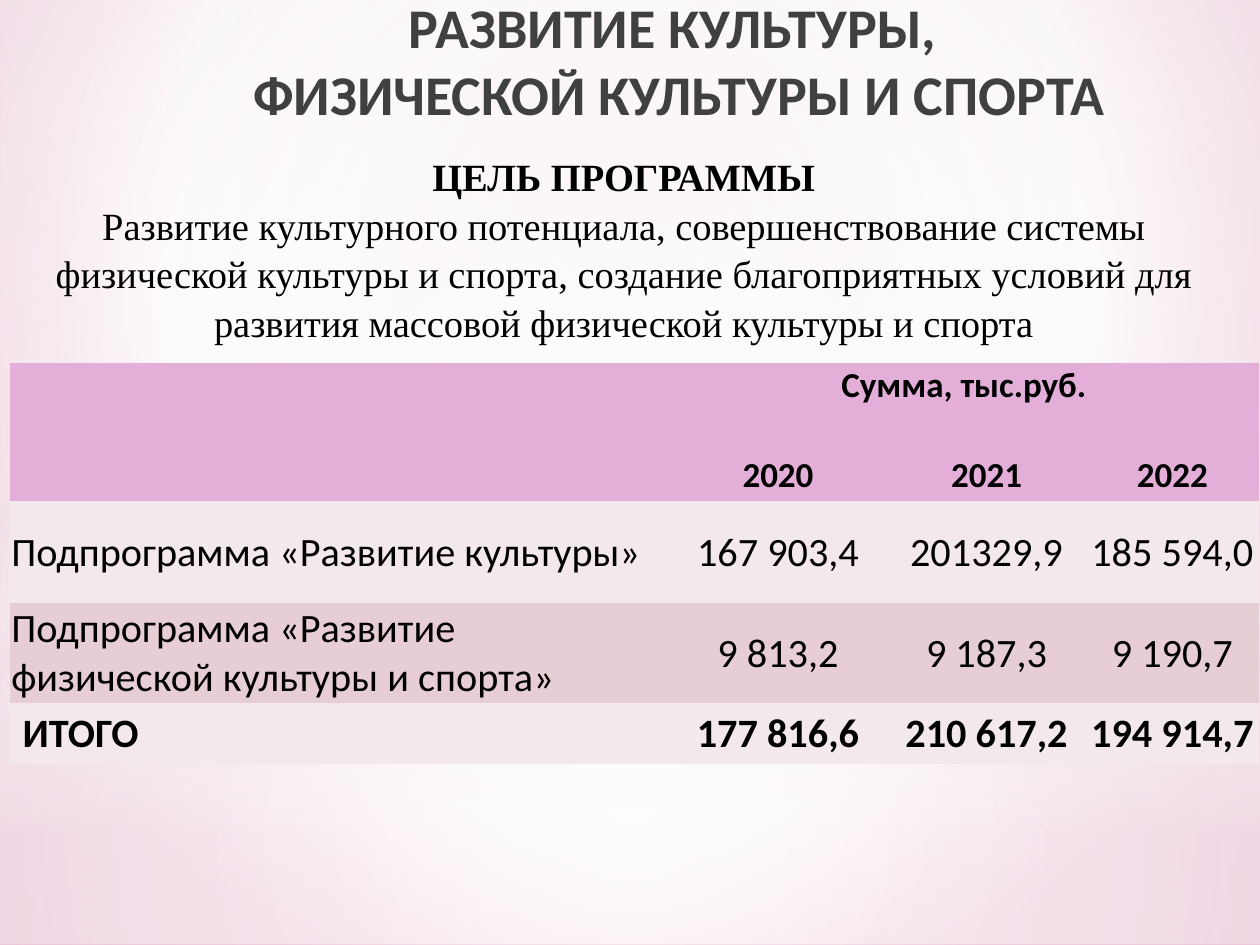
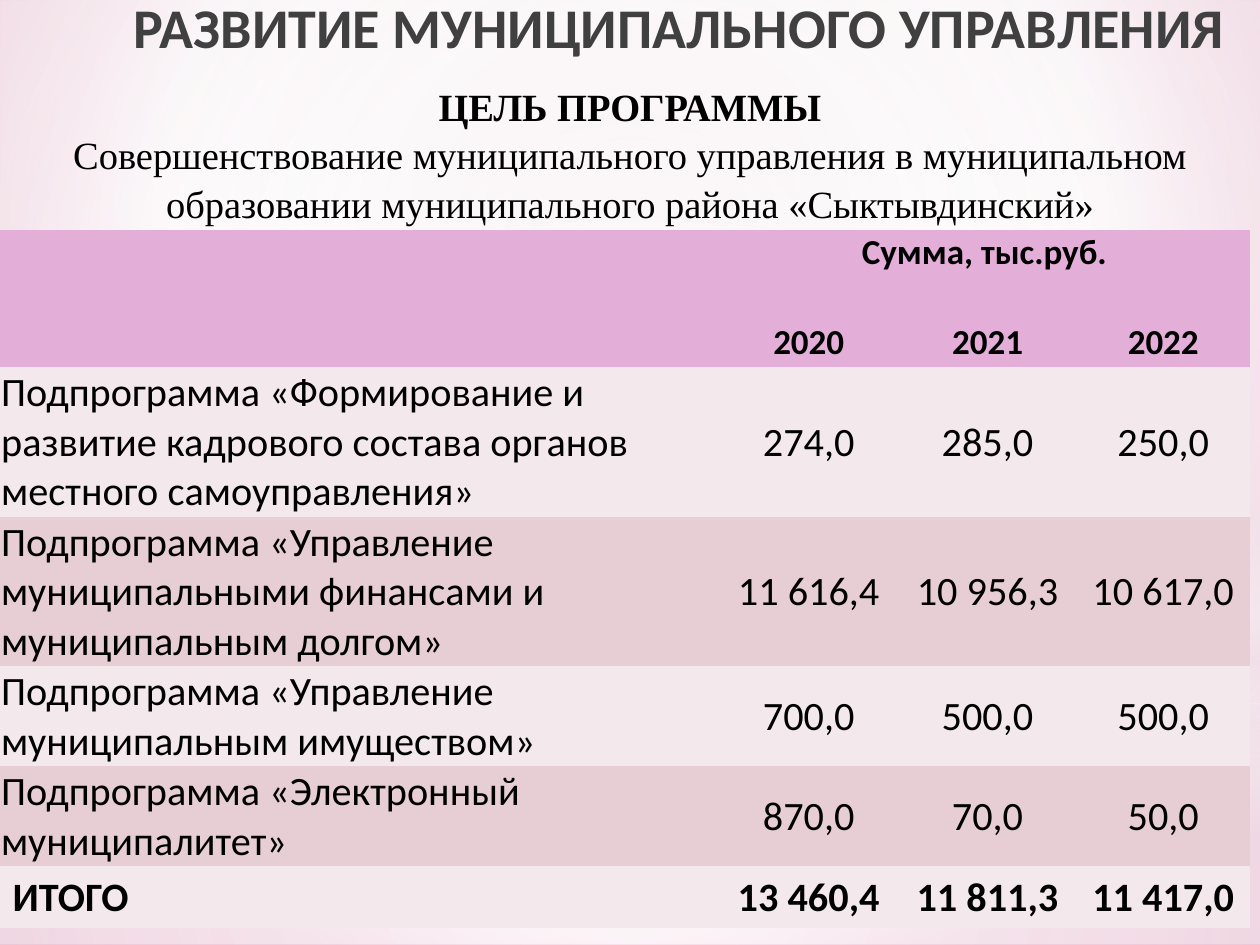
from dataclasses import dataclass
from typing import Optional

from lxml import etree
from pptx import Presentation
from pptx.dml.color import RGBColor
from pptx.enum.shapes import MSO_SHAPE as Shape
from pptx.enum.text import MSO_ANCHOR as Anchor, MSO_AUTO_SIZE as AutoSize, PP_ALIGN as Align
from pptx.oxml.ns import qn
from pptx.util import Pt

BLACK = RGBColor(0x00, 0x00, 0x00)
WHITE = RGBColor(0xFF, 0xFF, 0xFF)
TITLE_GREY = RGBColor(0x40, 0x40, 0x40)
HEADER_PINK = RGBColor(0xE3, 0xAF, 0xD8)
BAND_LIGHT = RGBColor(0xF3, 0xE8, 0xEB)
BAND_DARK = RGBColor(0xE6, 0xCE, 0xD4)
BLUSH = RGBColor(0xF4, 0xE7, 0xED)
BACK_CENTRE = RGBColor(0xED, 0xDA, 0xE2)
BACK_EDGE = RGBColor(0xE0, 0x9D, 0xBC)

SANS = "Calibri"
SERIF = "Times New Roman"
NO_GRID_STYLE = "{2D5ABB26-0587-4C30-8999-92F81FD0307C}"
YEARS = ("2020", "2021", "2022")
HEADER_HEIGHTS = (49.2, 29.5)
TOTAL_HEIGHT = 35.3
CELL_INSET = 0.72


@dataclass(frozen=True)
class Stop:
    position: int
    color: RGBColor
    alpha: int = 100


@dataclass(frozen=True)
class Gradient:
    stops: tuple[Stop, ...]
    focus: Optional[tuple[int, int, int, int]] = (50, 50, 50, 50)


@dataclass(frozen=True)
class Glow:
    kind: Shape
    top: float
    height: float
    gradient: Gradient


@dataclass(frozen=True)
class Row:
    label: str
    amounts: tuple[str, str, str]
    height: float = TOTAL_HEIGHT


@dataclass(frozen=True)
class Program:
    title: str
    goal: str
    goal_box: tuple[float, float, float, float]
    table_left: float
    table_top: float
    columns: tuple[float, float, float, float]
    subprograms: tuple[Row, ...]
    total: Row


BACKGROUND = Gradient(
    (Stop(0, BACK_CENTRE), Stop(60, WHITE), Stop(100, BACK_EDGE)), (20, 10, 20, 60))

GLOWS = (
    Glow(Shape.RECTANGLE, 402, 138, Gradient(
        (Stop(0, WHITE, 91), Stop(37, WHITE, 76), Stop(100, BLUSH, 79)))),
    Glow(Shape.RECTANGLE, 0, 402, Gradient(
        (Stop(0, WHITE, 89), Stop(48, WHITE, 62), Stop(100, BLUSH, 79)))),
    Glow(Shape.RECTANGLE, 297, 180, Gradient(
        (Stop(0, WHITE, 0), Stop(29, WHITE, 30), Stop(45, BLUSH, 40),
         Stop(55, WHITE, 26), Stop(65, BLUSH, 60), Stop(100, WHITE, 0)), None)),
    Glow(Shape.OVAL, 126, 402, Gradient((Stop(0, WHITE), Stop(56, WHITE, 0)))),
)

PROGRAMS = (
    Program(
        "РАЗВИТИЕ КУЛЬТУРЫ, \vФИЗИЧЕСКОЙ КУЛЬТУРЫ И СПОРТА",
        "Развитие культурного потенциала, совершенствование системы физической культуры "
        "и спорта, создание благоприятных условий для развития массовой физической "
        "культуры и спорта",
        (-3.6, 82.8, 720, 113.8), 5.76, 207.4, (376.6, 124.6, 113.8, 98.6),
        (Row("Подпрограмма «Развитие культуры»", ("167 903,4", "201329,9", "185 594,0"), 58.3),
         Row("Подпрограмма «Развитие физической культуры и спорта»",
             ("9 813,2", "9 187,3", "9 190,7"), 57)),
        Row("ИТОГО", ("177 816,6", "210 617,2", "194 914,7")),
    ),
    Program(
        "РАЗВИТИЕ МУНИЦИПАЛЬНОГО УПРАВЛЕНИЯ",
        "Совершенствование муниципального управления в муниципальном образовании "
        "муниципального района «Сыктывдинский»",
        (0, 42.5, 720, 87.1), 0, 131.2, (411.1, 102.2, 102.2, 98.6),
        (Row("Подпрограмма «Формирование и развитие кадрового состава органов местного "
             "самоуправления»", ("274,0", "285,0", "250,0"), 85.3),
         Row("Подпрограмма «Управление муниципальными финансами и муниципальным долгом»",
             ("11 616,4", "10 956,3", "10 617,0"), 85.3),
         Row("Подпрограмма «Управление муниципальным имуществом»",
             ("700,0", "500,0", "500,0"), 57),
         Row("Подпрограмма «Электронный муниципалитет»", ("870,0", "70,0", "50,0"), 57)),
        Row("ИТОГО", ("13 460,4", "11 811,3", "11 417,0")),
    ),
)


def gradient_xml(gradient: Gradient):
    fill = etree.Element(qn("a:gradFill"), rotWithShape="1")
    stops = etree.SubElement(fill, qn("a:gsLst"))
    for stop in gradient.stops:
        gs = etree.SubElement(stops, qn("a:gs"), pos=str(stop.position * 1000))
        color = etree.SubElement(gs, qn("a:srgbClr"), val=str(stop.color))
        if stop.alpha < 100:
            etree.SubElement(color, qn("a:alpha"), val=str(stop.alpha * 1000))
    if gradient.focus is None:
        etree.SubElement(fill, qn("a:lin"), ang="5400000", scaled="0")
    else:
        circle = etree.SubElement(fill, qn("a:path"), path="circle")
        sides = {side: str(v * 1000) for side, v in zip("ltrb", gradient.focus)}
        etree.SubElement(circle, qn("a:fillToRect"), **sides)
    return fill


def dress_master(prs, slide) -> None:
    master = prs.slide_master
    master.background.fill.solid()
    bg = master.element.xpath("./p:cSld/p:bg/p:bgPr")[0]
    bg.replace(bg[0], gradient_xml(BACKGROUND))
    for i, glow in enumerate(GLOWS):
        sp = slide.shapes.add_shape(glow.kind, 0, Pt(glow.top), prs.slide_width, Pt(glow.height))
        sp.shadow.inherit = False
        sp.line.fill.background()
        sp.element.spPr.insert(2, gradient_xml(glow.gradient))
        sp.element.xpath("./p:nvSpPr/p:cNvPr")[0].set("id", str(100 + i))
        master.shapes.element.insert(2 + i, sp.element)


def style(p, size: float, bold: bool, font: str = SANS,
          color: RGBColor = BLACK, align: Align = Align.CENTER) -> None:
    p.alignment = align
    p.font.name = font
    p.font.size = Pt(size)
    p.font.bold = bold
    p.font.color.rgb = color


def set_title(slide, text: str) -> None:
    sp = slide.shapes.title
    sp.left, sp.top, sp.width, sp.height = Pt(48.2), Pt(-7.9), Pt(679.7), Pt(71.3)
    tf = sp.text_frame
    tf.text = text
    tf.word_wrap = True
    tf.auto_size = AutoSize.NONE
    tf.vertical_anchor = Anchor.TOP
    style(tf.paragraphs[0], 32, True, color=TITLE_GREY)


def add_goal(slide, program: Program) -> None:
    tf = slide.shapes.add_textbox(*map(Pt, program.goal_box)).text_frame
    tf.word_wrap = True
    tf.text = "ЦЕЛЬ ПРОГРАММЫ\n" + program.goal
    for p, bold in zip(tf.paragraphs, (True, False)):
        style(p, 22, bold, SERIF)
        p.line_spacing = 1.05


def set_cell(cell, text: str, size: float, bold: bool, align: Align = Align.CENTER,
             anchor: Anchor = Anchor.MIDDLE) -> None:
    cell.text = text
    cell.vertical_anchor = anchor
    cell.margin_left = cell.margin_right = cell.margin_top = Pt(CELL_INSET)
    cell.margin_bottom = 0
    style(cell.text_frame.paragraphs[0], size, bold, align=align)


def add_budget(slide, program: Program) -> None:
    rows = (*program.subprograms, program.total)
    heights = (*HEADER_HEIGHTS, *(row.height for row in rows))
    frame = slide.shapes.add_table(
        len(heights), len(program.columns), Pt(program.table_left), Pt(program.table_top),
        Pt(sum(program.columns)), Pt(sum(heights)))
    table = frame.table
    frame.element.xpath(".//a:tableStyleId")[0].text = NO_GRID_STYLE
    for column, width in zip(table.columns, program.columns):
        column.width = Pt(width)
    for r, height in enumerate(heights):
        table.rows[r].height = Pt(height)
        color = HEADER_PINK if r < 2 else (BAND_LIGHT, BAND_DARK)[r % 2]
        for cell in table.rows[r].cells:
            cell.fill.solid()
            cell.fill.fore_color.rgb = color

    table.cell(0, 0).merge(table.cell(1, 0))
    table.cell(0, 1).merge(table.cell(0, 3))
    set_cell(table.cell(0, 1), "Сумма, тыс.руб.", 20, True, anchor=Anchor.TOP)
    for c, year in enumerate(YEARS, 1):
        set_cell(table.cell(1, c), year, 20, True)
    for r, row in enumerate(rows, 2):
        bold = row is program.total
        set_cell(table.cell(r, 0), row.label, 23, bold, Align.LEFT)
        for c, amount in enumerate(row.amounts, 1):
            set_cell(table.cell(r, c), amount, 23, bold)
    table.cell(len(heights) - 1, 0).margin_left = Pt(7.2)


def main() -> None:
    prs = Presentation()
    prs.slide_width, prs.slide_height = Pt(720), Pt(540)
    for i, program in enumerate(PROGRAMS):
        slide = prs.slides.add_slide(prs.slide_layouts[5])
        if i == 0:
            dress_master(prs, slide)
        set_title(slide, program.title)
        add_budget(slide, program)
        add_goal(slide, program)
    prs.save("out.pptx")


if __name__ == "__main__":
    main()
